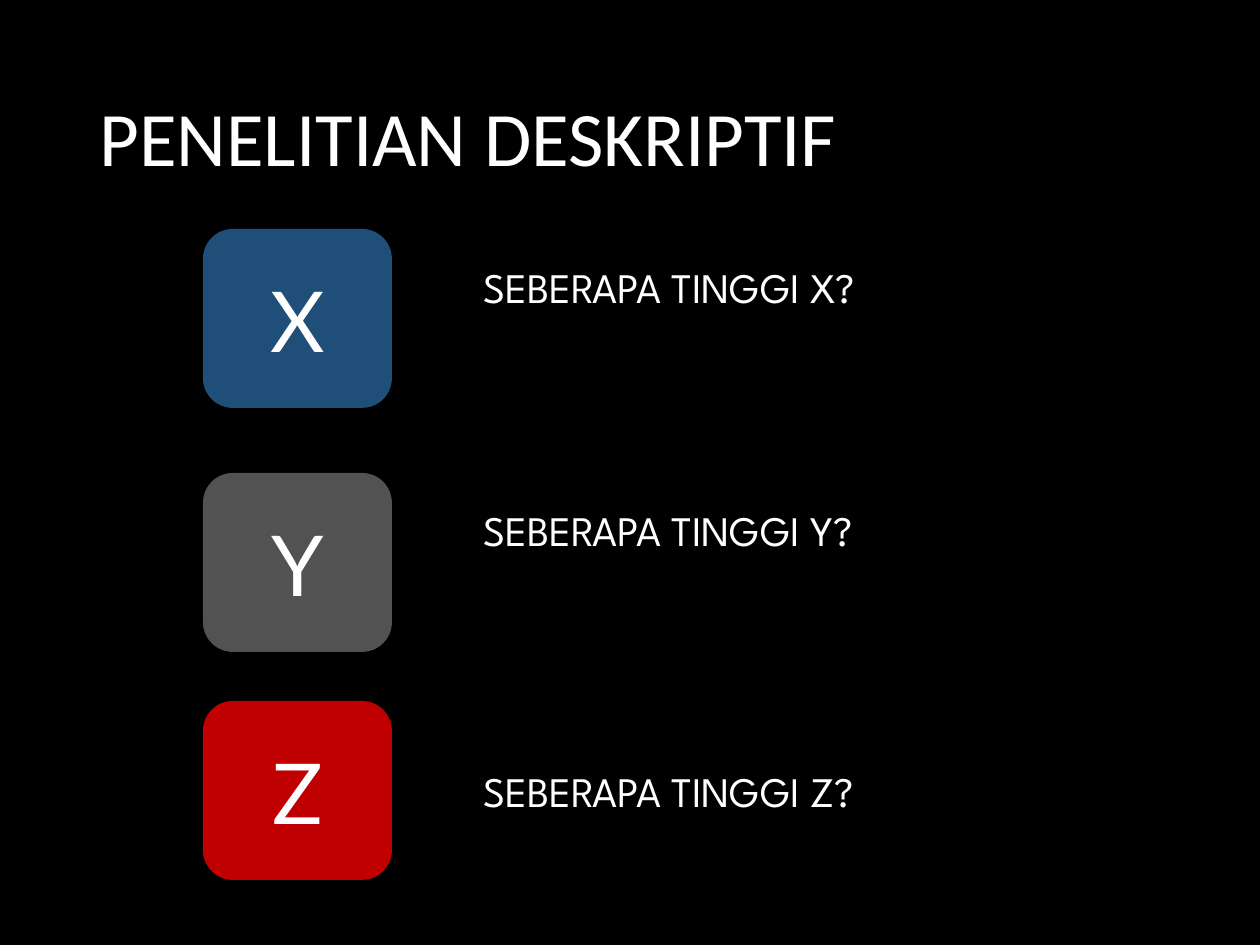
import pptx
import pptx.util
import pptx.dml.color
import pptx.enum.shapes
import pptx.enum.text

RGB = pptx.dml.color.RGBColor
BLACK = RGB(0x00, 0x00, 0x00)
WHITE = RGB(0xFF, 0xFF, 0xFF)
BLUE = RGB(0x1F, 0x4E, 0x79)
GREY = RGB(0x52, 0x52, 0x52)
RED = RGB(0xC0, 0x00, 0x00)

ANCHOR = pptx.enum.text.MSO_ANCHOR
ALIGN = pptx.enum.text.PP_ALIGN

# Text formats
TITLE = {"name": "Calibri", "size": pptx.util.Pt(44)}
LETTER = {"name": "Lato", "size": pptx.util.Pt(48)}
LABEL = {"name": "League Spartan", "size": pptx.util.Pt(24)}

# Letter, tile colour, tile top, label top
ROWS = [
    ("X", BLUE, 229, 255),
    ("Y", GREY, 473, 498),
    ("Z", RED, 701, 759),
]


def px(n):
    return pptx.util.Emu(round(n * 914400 / 126))


def write(shape, text, style, anchor, align=ALIGN.LEFT):
    frame = shape.text_frame
    frame.word_wrap = True
    frame.vertical_anchor = anchor
    para = frame.paragraphs[0]
    para.alignment = align
    run = para.add_run()
    run.text = text
    for key, value in style.items():
        setattr(run.font, key, value)
    run.font.color.rgb = WHITE
    return para


def add_text(slide, text, box, style, anchor=ANCHOR.TOP):
    shape = slide.shapes.add_textbox(*map(px, box))
    return write(shape, text, style, anchor)


def add_tile(slide, text, box, color):
    kind = pptx.enum.shapes.MSO_SHAPE.ROUNDED_RECTANGLE
    tile = slide.shapes.add_shape(kind, *map(px, box))
    tile.shadow.inherit = False
    tile.fill.solid()
    tile.fill.fore_color.rgb = color
    tile.line.fill.background()
    write(tile, text, LETTER, ANCHOR.MIDDLE, ALIGN.CENTER)


def main():
    deck = pptx.Presentation()
    deck.slide_width, deck.slide_height = px(1260), px(945)
    slide = deck.slides.add_slide(deck.slide_layouts[6])

    # Background
    slide.background.fill.solid()
    slide.background.fill.fore_color.rgb = BLACK

    # Title
    title = add_text(slide, "PENELITIAN DESKRIPTIF", (87, 50, 1086, 183),
                     TITLE, ANCHOR.MIDDLE)
    title.line_spacing = 0.9

    # Variables with their questions
    for letter, color, top, label in ROWS:
        add_tile(slide, letter, (203, top, 189, 179), color)
        add_text(slide, f"SEBERAPA TINGGI {letter}?",
                 (471, label, 556, 63), LABEL)

    deck.save("out.pptx")


if __name__ == "__main__":
    main()
